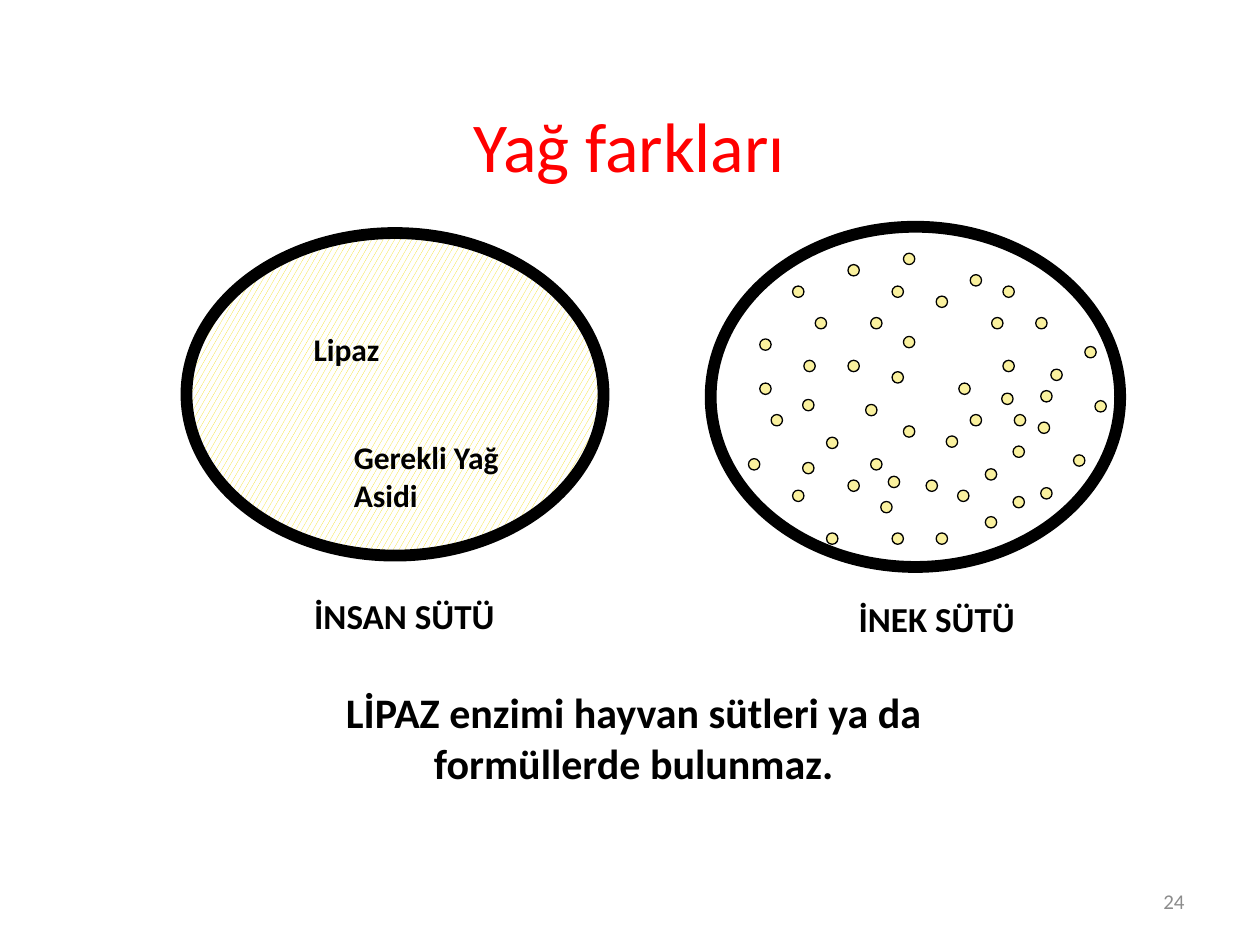
from dataclasses import dataclass

from pptx import Presentation
from pptx.dml.color import RGBColor
from pptx.enum.dml import MSO_PATTERN
from pptx.enum.shapes import MSO_SHAPE
from pptx.enum.text import MSO_ANCHOR, MSO_AUTO_SIZE, PP_ALIGN
from pptx.shapes.autoshape import Shape
from pptx.util import Emu, Pt

EMU_PER_PX = 9144
FONT = "Calibri"
COLORS = {
    "black": "000000",
    "white": "FFFFFF",
    "title": "FF0000",
    "number": "8C8C8C",
    "fat": "F2DC0C",
    "droplet": "FAF19E",
}
DROPLET_SIZE = 9
DROPLETS = [
    (594, 364), (629, 389), (656, 423), (603, 269), (629, 227), (673, 210),
    (717, 201), (717, 338), (770, 329), (691, 252), (796, 286), (673, 381),
    (743, 423), (805, 329), (826, 387), (852, 361), (869, 318), (861, 275),
    (770, 218), (822, 252), (708, 295), (708, 423), (687, 321), (612, 329),
    (647, 252), (735, 381), (699, 398), (834, 293), (708, 227), (787, 252),
    (761, 304), (673, 286), (782, 372), (691, 364), (796, 227), (743, 235),
    (656, 347), (603, 304), (638, 286), (760, 389), (751, 346), (795, 312),
    (804, 354), (717, 267), (826, 310), (824, 335), (804, 394), (782, 410),
    (637, 317), (637, 367), (705, 378),
]


@dataclass
class Box:
    left: int
    top: int
    width: int
    height: int

    def emu(self) -> list[Emu]:
        return [px(value) for value in (self.left, self.top, self.width, self.height)]


@dataclass
class Label:
    text: str
    box: Box
    size: int
    color: str = "black"
    bold: bool = True
    align: PP_ALIGN = PP_ALIGN.CENTER
    wrap: bool = True
    anchor: MSO_ANCHOR = MSO_ANCHOR.TOP
    auto_size: MSO_AUTO_SIZE = MSO_AUTO_SIZE.SHAPE_TO_FIT_TEXT


TITLE = Label("Yağ farkları", Box(341, 76, 317, 77), 40, "title", bold=False)
LABELS = [
    Label("Gerekli Yağ Asidi", Box(271, 343, 173, 70), 18, align=PP_ALIGN.LEFT),
    Label("Lipaz", Box(239, 257, 150, 40), 18, align=PP_ALIGN.LEFT),
    Label("İNSAN SÜTÜ", Box(239, 467, 164, 44), 20, wrap=False),
    Label("İNEK SÜTÜ", Box(671, 469, 145, 44), 20, wrap=False),
    Label("LİPAZ enzimi hayvan sütleri ya da formüllerde bulunmaz.", Box(181, 540, 644, 91), 24),
    Label("24", Box(717, 695, 233, 40), 12, "number", bold=False, align=PP_ALIGN.RIGHT,
          anchor=MSO_ANCHOR.MIDDLE, auto_size=MSO_AUTO_SIZE.NONE),
]


def px(value: int) -> Emu:
    return Emu(value * EMU_PER_PX)


def rgb(name: str) -> RGBColor:
    return RGBColor.from_string(COLORS[name])


def write_label(shape: Shape, label: Label) -> None:
    shape.left, shape.top, shape.width, shape.height = label.box.emu()
    frame = shape.text_frame
    frame.text = label.text
    frame.word_wrap = label.wrap
    frame.auto_size = label.auto_size
    frame.vertical_anchor = label.anchor
    para = frame.paragraphs[0]
    para.alignment = label.align
    font = para.runs[0].font
    font.name = FONT
    font.size = Pt(label.size)
    font.bold = label.bold
    font.color.rgb = rgb(label.color)


def add_oval(shapes, box: Box, fill: str, line_width: float) -> Shape:
    oval = shapes.add_shape(MSO_SHAPE.OVAL, *box.emu())
    oval.shadow.inherit = False
    oval.fill.solid()
    oval.fill.fore_color.rgb = rgb(fill)
    oval.line.color.rgb = rgb("black")
    oval.line.width = Pt(line_width)
    return oval


def add_human_milk(shapes) -> None:
    oval = add_oval(shapes, Box(148, 185, 331, 256), "white", 6.75)
    oval.fill.patterned()
    oval.fill.pattern = MSO_PATTERN.LARGE_CONFETTI
    oval.fill.fore_color.rgb = rgb("fat")
    oval.fill.back_color.rgb = rgb("white")


def add_cow_milk(shapes) -> None:
    group = shapes.add_group_shape()
    add_oval(group.shapes, Box(564, 180, 325, 270), "white", 6.75)
    for left, top in DROPLETS:
        add_oval(group.shapes, Box(left, top, DROPLET_SIZE, DROPLET_SIZE), "droplet", 0.75)


def main() -> None:
    deck = Presentation()
    deck.slide_width, deck.slide_height = px(1000), px(750)
    page = deck.slides.add_slide(deck.slide_layouts[5])
    add_human_milk(page.shapes)
    add_cow_milk(page.shapes)
    write_label(page.shapes.title, TITLE)
    for label in LABELS:
        write_label(page.shapes.add_textbox(*label.box.emu()), label)
    deck.save("out.pptx")


if __name__ == "__main__":
    main()
